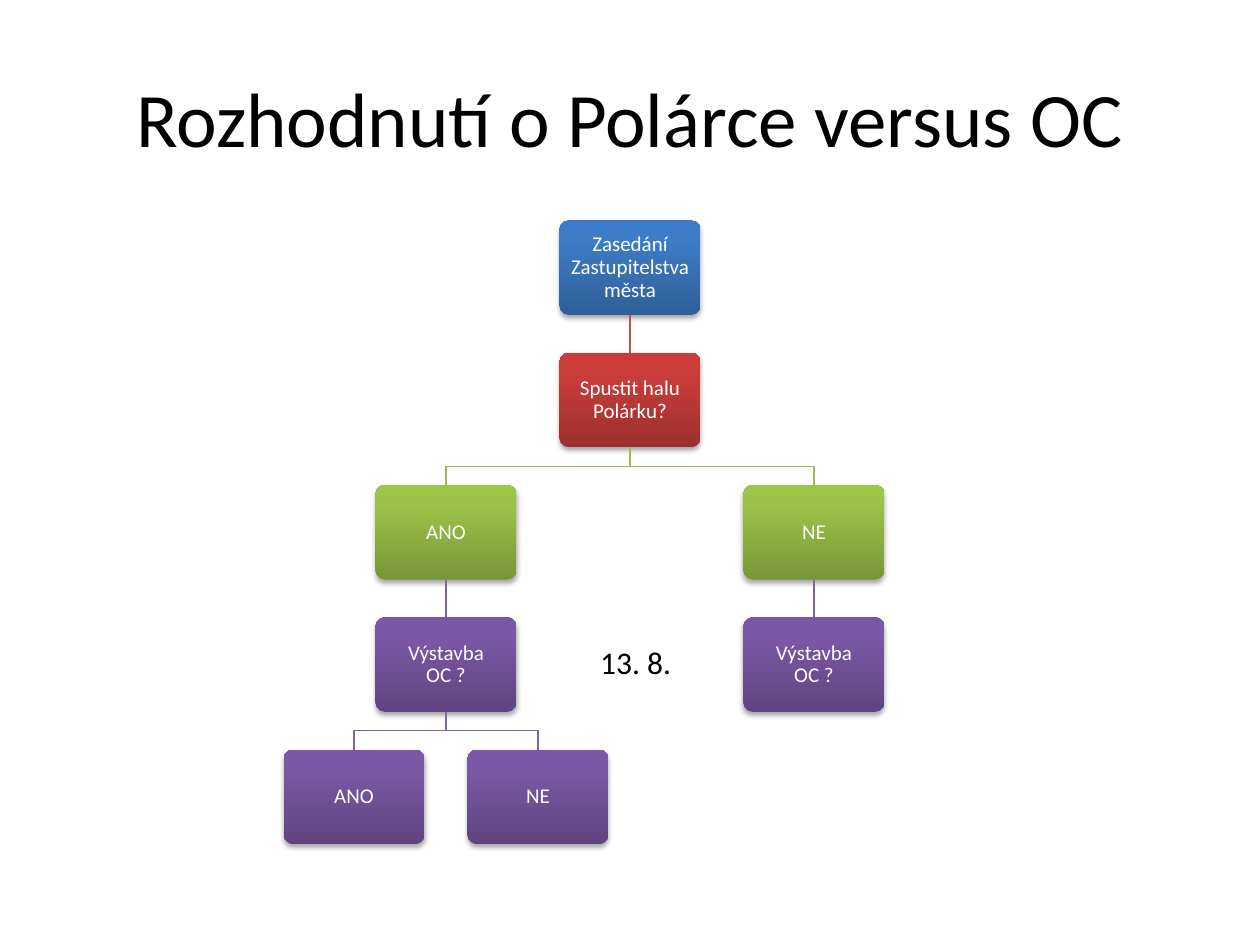
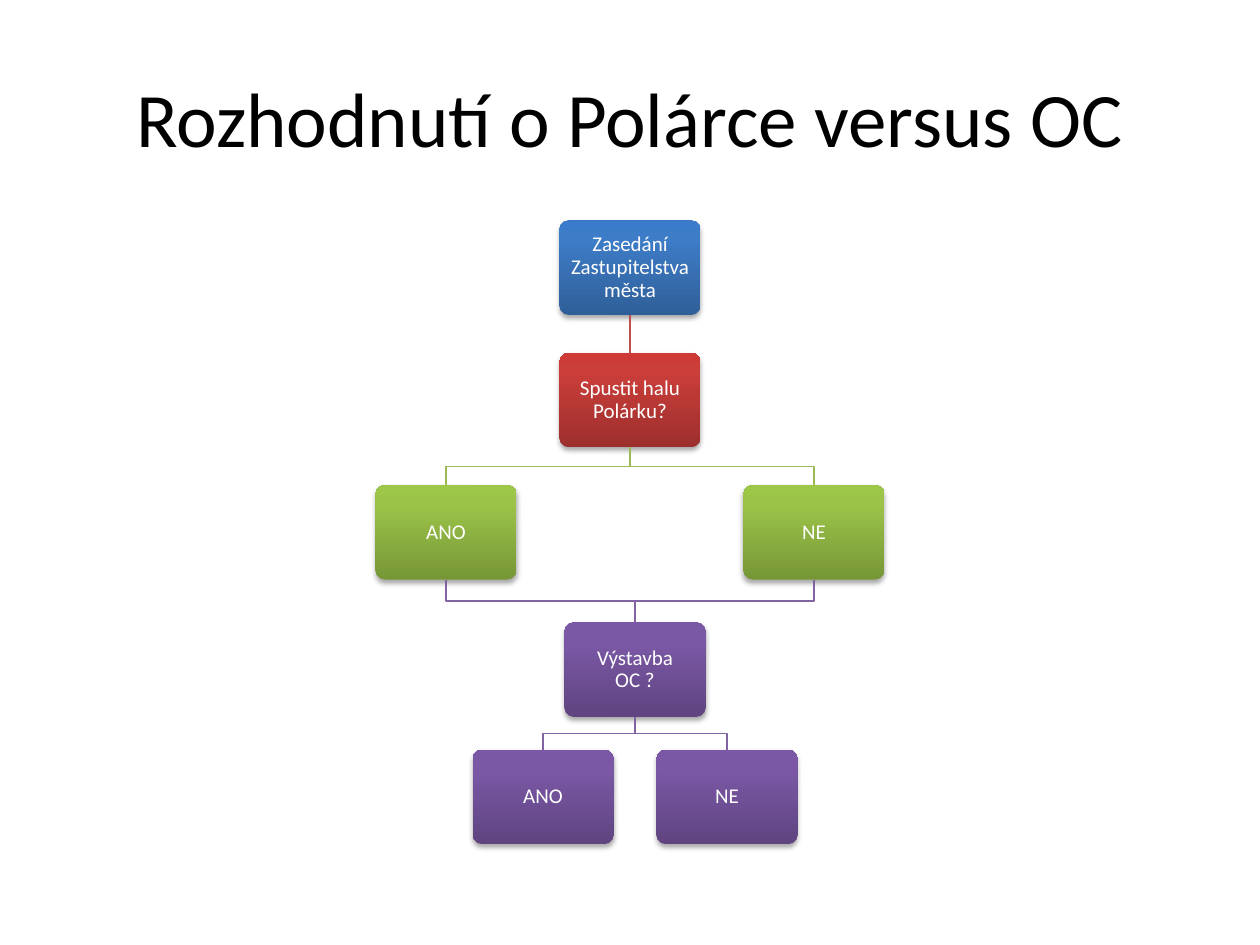
import copy
import dataclasses

import pptx
import pptx.dml.color
import pptx.enum.shapes
import pptx.enum.text
import pptx.oxml
import pptx.oxml.ns
import pptx.util

Inches, Pt = pptx.util.Inches, pptx.util.Pt
RGB = pptx.dml.color.RGBColor.from_string


@dataclasses.dataclass(frozen=True)
class Theme:
    font: str = "Calibri"
    ink: str = "000000"
    paper: str = "FFFFFF"
    title: int = 44
    date: int = 18
    label: int = 12
    rule: float = 0.75
    # Each tone: gradient from bottom to top, then its line colour
    blue: tuple = ("2F5F99", "3D7CC7", "3A7CCB", "4F81BD")
    red: tuple = ("9C2F2D", "CB3E3A", "CE3B37", "C0504D")
    green: tuple = ("779737", "9BC348", "9DC746", "9BBB59")
    violet: tuple = ("5F4480", "7B58A6", "7C57A8", "8064A2")


theme = Theme()
WIDE, HIGH = 1.12, 0.75
TOP, STEP = 1.75, 1.05
MID, SIDE = 5, 1.46
LEFT, RIGHT = MID - SIDE, MID + SIDE
HALF = SIDE / 2
ROWS = [TOP + STEP * row for row in range(5)]
JOIN = 5.04
SHADOW = (
    f'<a:outerShdw {pptx.oxml.ns.nsdecls("a")} blurRad="{Pt(3.1)}" dist="{Pt(1.8)}"'
    ' dir="5400000" rotWithShape="0"><a:srgbClr val="000000">'
    '<a:alpha val="35000"/></a:srgbClr></a:outerShdw>'
)


def write(shape, text, size, color, inset=None):
    """Set centred text in the middle of a shape."""
    frame = shape.text_frame
    frame.word_wrap = True
    frame.vertical_anchor = pptx.enum.text.MSO_ANCHOR.MIDDLE
    if inset is not None:
        frame.margin_left = frame.margin_right = Inches(inset)
        frame.margin_top = frame.margin_bottom = Inches(inset)
    par = frame.paragraphs[0]
    par.text = text
    par.alignment = pptx.enum.text.PP_ALIGN.CENTER
    par.font.name, par.font.size = theme.font, Pt(size)
    par.font.color.rgb = RGB(color)
    return par


def link(slide, start, end, color):
    """Join the foot of one box to the top of another."""
    x, y = start.left + start.width // 2, start.top + start.height
    to_x, to_y = end.left + end.width // 2, end.top
    if x == to_x:
        line = slide.shapes.add_connector(
            pptx.enum.shapes.MSO_CONNECTOR.STRAIGHT, x, y, to_x, to_y)
        line.begin_connect(start, 2)
        line.end_connect(end, 0)
        pptx.oxml.ns.qn
        line._element.spPr.append(pptx.oxml.parse_xml(
            f'<a:effectLst {pptx.oxml.ns.nsdecls("a")}/>'))
    else:
        bend = (y + to_y) // 2
        path = slide.shapes.build_freeform(x, y)
        path.add_line_segments([(x, bend), (to_x, bend), (to_x, to_y)], close=False)
        line = path.convert_to_shape()
        line.fill.background()
        line.shadow.inherit = False
    line.line.color.rgb = RGB(color)
    line.line.width = Pt(theme.rule)


# Each node: key, text, centre, top, tone, keys of its parents
trunk = [
    ("town", "Zasedání Zastupitelstva města", MID, ROWS[0], theme.blue, ()),
    ("hall", "Spustit halu Polárku?", MID, ROWS[1], theme.red, ("town",)),
    ("yes", "ANO", LEFT, ROWS[2], theme.green, ("hall",)),
    ("no", "NE", RIGHT, ROWS[2], theme.green, ("hall",)),
]
split = trunk + [
    ("mall", "Výstavba OC ?", LEFT, ROWS[3], theme.violet, ("yes",)),
    ("other", "Výstavba OC ?", RIGHT, ROWS[3], theme.violet, ("no",)),
    ("build", "ANO", LEFT - HALF, ROWS[4], theme.violet, ("mall",)),
    ("stop", "NE", LEFT + HALF, ROWS[4], theme.violet, ("mall",)),
]
merged = trunk + [
    ("mall", "Výstavba OC ?", JOIN, 4.94, theme.violet, ("yes", "no")),
    ("build", "ANO", JOIN - HALF, ROWS[4], theme.violet, ("mall",)),
    ("stop", "NE", JOIN + HALF, ROWS[4], theme.violet, ("mall",)),
]

deck = pptx.Presentation()
deck.slide_width, deck.slide_height = Inches(10), Inches(7.5)

for tree, date in [(split, "13. 8."), (merged, None)]:
    slide = deck.slides.add_slide(deck.slide_layouts[6])
    head = slide.shapes.add_textbox(Inches(0.5), Inches(0.3), Inches(9), Inches(1.25))
    write(head, "Rozhodnutí o Polárce versus OC", theme.title, theme.ink)

    boxes = {}
    for key, text, x, y, tone, roots in tree:
        box = slide.shapes.add_shape(
            pptx.enum.shapes.MSO_SHAPE.ROUNDED_RECTANGLE,
            Inches(x - WIDE / 2), Inches(y), Inches(WIDE), Inches(HIGH))
        box.adjustments[0] = 0.1
        box.fill.gradient()
        box.fill.gradient_angle = 90
        stop = box._element.spPr.find(".//" + pptx.oxml.ns.qn("a:gs"))
        stop.addnext(copy.deepcopy(stop))
        for mark, place, color in zip(box.fill.gradient_stops, (0, 0.8, 1), tone):
            mark.position, mark.color.rgb = place, RGB(color)
        box.line.fill.background()
        box.shadow.inherit = False
        box._element.spPr.find(pptx.oxml.ns.qn("a:effectLst")).append(
            pptx.oxml.parse_xml(SHADOW))
        write(box, text, theme.label, theme.paper, 0.07).line_spacing = 0.9
        boxes[key] = box
        for root in roots:
            link(slide, boxes[root], box, tone[-1])

    if date:
        note = slide.shapes.add_textbox(
            Inches(4.61), Inches(5.05), Inches(0.87), Inches(0.4))
        write(note, date, theme.date, theme.ink)

deck.save("out.pptx")
